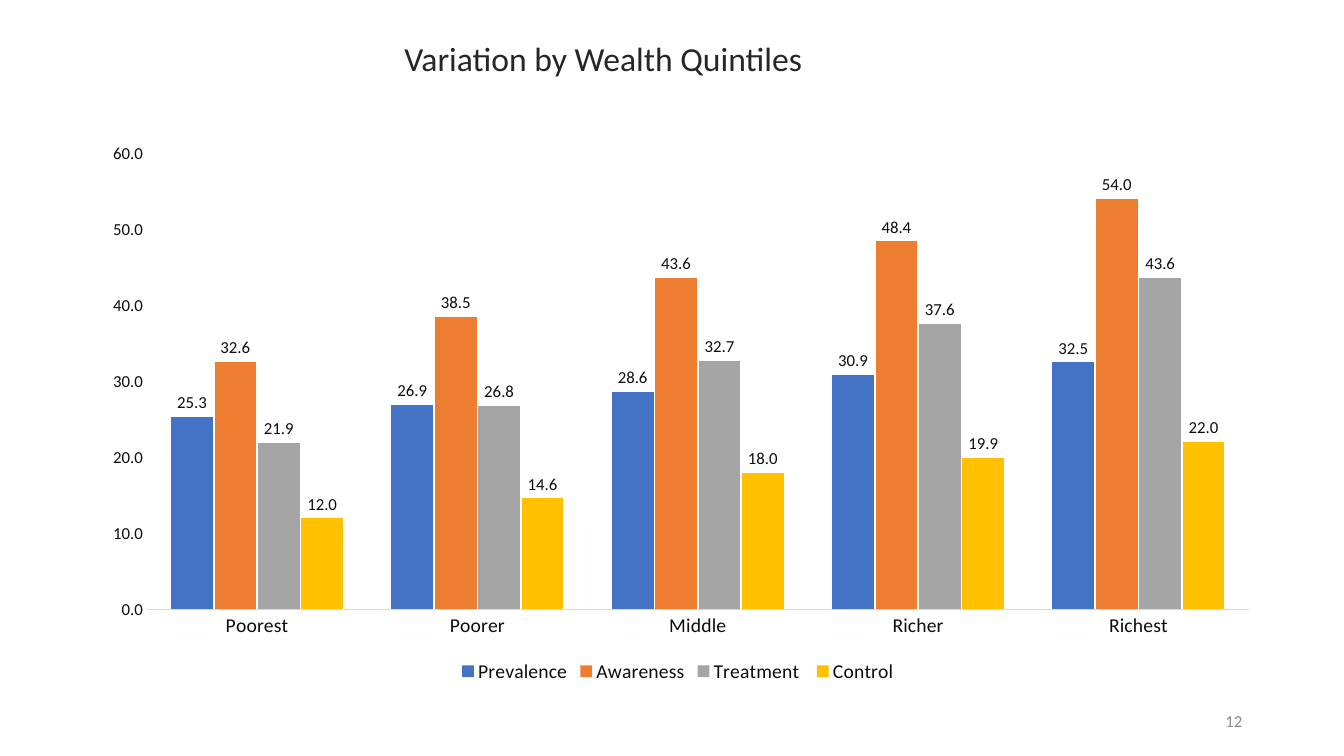
from typing import NamedTuple

from lxml.etree import SubElement
from pptx import Presentation
from pptx.chart.data import CategoryChartData
from pptx.dml.color import RGBColor
from pptx.enum.chart import XL_CHART_TYPE, XL_LABEL_POSITION, XL_LEGEND_POSITION, XL_TICK_MARK
from pptx.enum.text import MSO_ANCHOR, PP_ALIGN
from pptx.oxml.ns import qn
from pptx.util import Pt

PX = 9144  # EMU per px, 100 px to the inch
FONT = "Calibri"
BLACK = RGBColor(0x0D, 0x0D, 0x0D)
TITLE_GREY = RGBColor(0x26, 0x26, 0x26)
NUMBER_GREY = RGBColor(0x8C, 0x8C, 0x8C)
AXIS_GREY = RGBColor(0xD9, 0xD9, 0xD9)
BLUE = RGBColor(0x44, 0x72, 0xC4)
ORANGE = RGBColor(0xED, 0x7D, 0x31)
GREY = RGBColor(0xA5, 0xA5, 0xA5)
GOLD = RGBColor(0xFF, 0xC0, 0x00)


class Box(NamedTuple):
    left: int
    top: int
    width: int
    height: int

    def emu(self) -> list[int]:
        return [v * PX for v in self]


class Measure(NamedTuple):
    name: str
    color: RGBColor
    values: tuple[float, ...]


QUINTILES = ("Poorest", "Poorer", "Middle", "Richer", "Richest")
MEASURES = (
    Measure("Prevalence", BLUE, (25.3, 26.9, 28.6, 30.9, 32.5)),
    Measure("Awareness", ORANGE, (32.6, 38.5, 43.6, 48.4, 54.0)),
    Measure("Treatment ", GREY, (21.9, 26.8, 32.7, 37.6, 43.6)),
    Measure("Control ", GOLD, (12.0, 14.6, 18.0, 19.9, 22.0)),
)


def set_attrs(obj, **values) -> None:
    for name, value in values.items():
        setattr(obj, name, value)


def set_font(font, size: int, color: RGBColor = BLACK) -> None:
    set_attrs(font, name=FONT, size=Pt(size), bold=False)
    font.color.rgb = color


def write(sp, text: str, size: int, color: RGBColor, align: PP_ALIGN, anchor: MSO_ANCHOR) -> None:
    tf = sp.text_frame
    set_attrs(tf, word_wrap=True, vertical_anchor=anchor)
    p = tf.paragraphs[0]
    p.alignment = align
    r = p.add_run()
    r.text = text
    set_font(r.font, size, color)


def set_plot_layout(chart, **fractions: float) -> None:
    plot_area = chart._chartSpace.chart.plotArea
    layout = plot_area.find(qn("c:layout"))
    if layout is None:
        layout = SubElement(plot_area, qn("c:layout"))
        plot_area.insert(0, layout)
    manual = SubElement(layout, qn("c:manualLayout"))
    settings = {"layoutTarget": "inner", "xMode": "edge", "yMode": "edge", **fractions}
    for tag, value in settings.items():
        SubElement(manual, qn(f"c:{tag}")).set("val", str(value))


def add_quintile_chart(s, box: Box) -> None:
    data = CategoryChartData(number_format="0.0")
    data.categories = QUINTILES
    for m in MEASURES:
        data.add_series(m.name, m.values)
    chart = s.shapes.add_chart(XL_CHART_TYPE.COLUMN_CLUSTERED, *box.emu(), data).chart
    set_attrs(chart, has_title=False, has_legend=True)
    set_font(chart.font, 10)
    set_attrs(chart.legend, position=XL_LEGEND_POSITION.BOTTOM, include_in_layout=False)
    set_font(chart.legend.font, 14)
    set_plot_layout(chart, x=0.05, y=0.04, w=0.93, h=0.82)

    # Axes
    for axis, size in ((chart.category_axis, 14), (chart.value_axis, 12)):
        set_attrs(axis, major_tick_mark=XL_TICK_MARK.NONE, minor_tick_mark=XL_TICK_MARK.NONE,
                  has_major_gridlines=False)
        set_font(axis.tick_labels.font, size)
    line = chart.category_axis.format.line
    line.color.rgb = AXIS_GREY
    line.width = Pt(0.75)
    set_attrs(chart.value_axis, minimum_scale=0, maximum_scale=60, major_unit=10)
    set_attrs(chart.value_axis.tick_labels, number_format="0.0", number_format_is_linked=False)
    chart.value_axis.format.line.fill.background()

    # Columns and their labels
    plot = chart.plots[0]
    set_attrs(plot, gap_width=116, overlap=-4, vary_by_categories=False)
    for series, m in zip(plot.series, MEASURES):
        series.format.fill.solid()
        series.format.fill.fore_color.rgb = m.color
        labels = series.data_labels
        set_attrs(labels, show_value=True, number_format="0.0", number_format_is_linked=False,
                  position=XL_LABEL_POSITION.OUTSIDE_END)
        set_font(labels.font, 12)


def main() -> None:
    prs = Presentation()
    set_attrs(prs, slide_width=1333 * PX, slide_height=750 * PX)
    s = prs.slides.add_slide(prs.slide_layouts[5])

    # Title
    title = s.shapes.title
    title.left, title.top, title.width, title.height = Box(391, 33, 667, 50).emu()
    write(title, "Variation by Wealth Quintiles", 24, TITLE_GREY, PP_ALIGN.LEFT, MSO_ANCHOR.TOP)

    add_quintile_chart(s, Box(87, 130, 1175, 552))

    # Slide number
    number = s.shapes.add_textbox(*Box(942, 695, 300, 40).emu())
    write(number, "12", 12, NUMBER_GREY, PP_ALIGN.RIGHT, MSO_ANCHOR.MIDDLE)

    prs.save("out.pptx")


if __name__ == "__main__":
    main()
